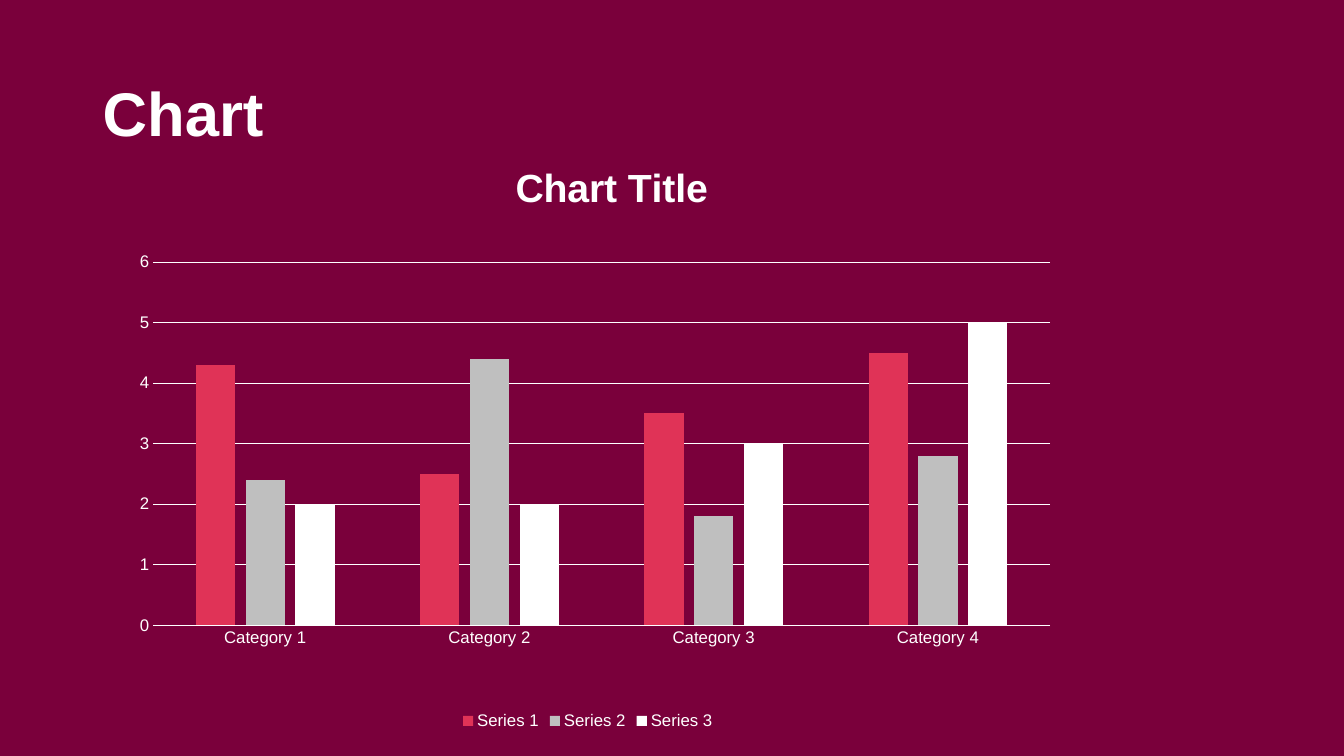
from lxml import etree
from pptx import Presentation
from pptx.chart.data import CategoryChartData
from pptx.dml.color import RGBColor
from pptx.enum.chart import XL_CHART_TYPE, XL_LEGEND_POSITION, XL_TICK_MARK
from pptx.oxml.ns import qn
from pptx.util import Inches, Pt

COLUMNS = XL_CHART_TYPE.COLUMN_CLUSTERED
BOTTOM = XL_LEGEND_POSITION.BOTTOM
NO_TICK = XL_TICK_MARK.NONE

FONT = "Arial"
COLOURS = {"background": "7A003B", "white": "FFFFFF", "red": "E03357", "grey": "BFBFBF"}
HEADING = "Chart"
HEADING_AREA = (0.92, 0.78, 9.77, 1.45)
CHART_TITLE = "Chart Title"
CHART_AREA = (0.92, 1.43, 9.82, 5.85)
TITLE_LAYOUT = {"xMode": "edge", "yMode": "edge", "x": 0.42, "y": 0.02}
PLOT_LAYOUT = {"layoutTarget": "inner", "xMode": "edge", "yMode": "edge",
               "x": 0.061, "y": 0.2, "w": 0.906, "h": 0.616}
CATEGORIES = ["Category 1", "Category 2", "Category 3", "Category 4"]
SERIES = [
    ("Series 1", "red", (4.3, 2.5, 3.5, 4.5)),
    ("Series 2", "grey", (2.4, 4.4, 1.8, 2.8)),
    ("Series 3", "white", (2, 2, 3, 5)),
]


def colour(name):
    return RGBColor.from_string(COLOURS[name])


def style_font(font, size, bold=False):
    font.name = FONT
    font.size = Pt(size)
    font.bold = bold
    font.color.rgb = colour("white")


def style_line(line, width):
    line.color.rgb = colour("white")
    line.width = Pt(width)


def set_layout(parent, position, settings):
    for old in parent.findall(qn("c:layout")):
        parent.remove(old)
    layout = etree.Element(qn("c:layout"))
    manual = etree.SubElement(layout, qn("c:manualLayout"))
    for key, value in settings.items():
        etree.SubElement(manual, qn(f"c:{key}")).set("val", str(value))
    parent.insert(position, layout)


def add_heading(page):
    box = page.shapes.add_textbox(*map(Inches, HEADING_AREA))
    box.text_frame.word_wrap = True
    para = box.text_frame.paragraphs[0]
    para.text = HEADING
    para.line_spacing = 0.9
    style_font(para.font, 44, True)


def add_column_chart(page):
    data = CategoryChartData()
    data.categories = CATEGORIES
    for name, _, values in SERIES:
        data.add_series(name, values)
    chart = page.shapes.add_chart(COLUMNS, *map(Inches, CHART_AREA), data).chart
    style_font(chart.font, 10)

    chart.has_title = True
    title = chart.chart_title
    para = title.text_frame.paragraphs[0]
    para.text = CHART_TITLE
    style_font(para.font, 28, True)
    set_layout(title._element, 1, TITLE_LAYOUT)

    plot = chart.plots[0]
    plot.gap_width = 219
    plot.overlap = -27
    plot.vary_by_categories = False
    for series, (_, fill, _) in zip(plot.series, SERIES):
        series.format.fill.solid()
        series.format.fill.fore_color.rgb = colour(fill)
    set_layout(chart._chartSpace.chart.plotArea, 0, PLOT_LAYOUT)

    for axis in (chart.category_axis, chart.value_axis):
        axis.major_tick_mark = axis.minor_tick_mark = NO_TICK
        style_font(axis.tick_labels.font, 12)
    style_line(chart.category_axis.format.line, 0.75)
    values = chart.value_axis
    values.minimum_scale, values.maximum_scale, values.major_unit = 0, 6, 1
    values.format.line.fill.background()
    values.has_major_gridlines = True
    style_line(values.major_gridlines.format.line, 0.5)

    chart.has_legend = True
    chart.legend.position = BOTTOM
    chart.legend.include_in_layout = False
    style_font(chart.legend.font, 12)


def main():
    """Build a slide with a heading and a clustered column chart."""
    deck = Presentation()
    deck.slide_width, deck.slide_height = Inches(13.33), Inches(7.5)
    page = deck.slides.add_slide(deck.slide_layouts[6])
    page.background.fill.solid()
    page.background.fill.fore_color.rgb = colour("background")
    add_heading(page)
    add_column_chart(page)
    deck.save("out.pptx")


if __name__ == "__main__":
    main()
